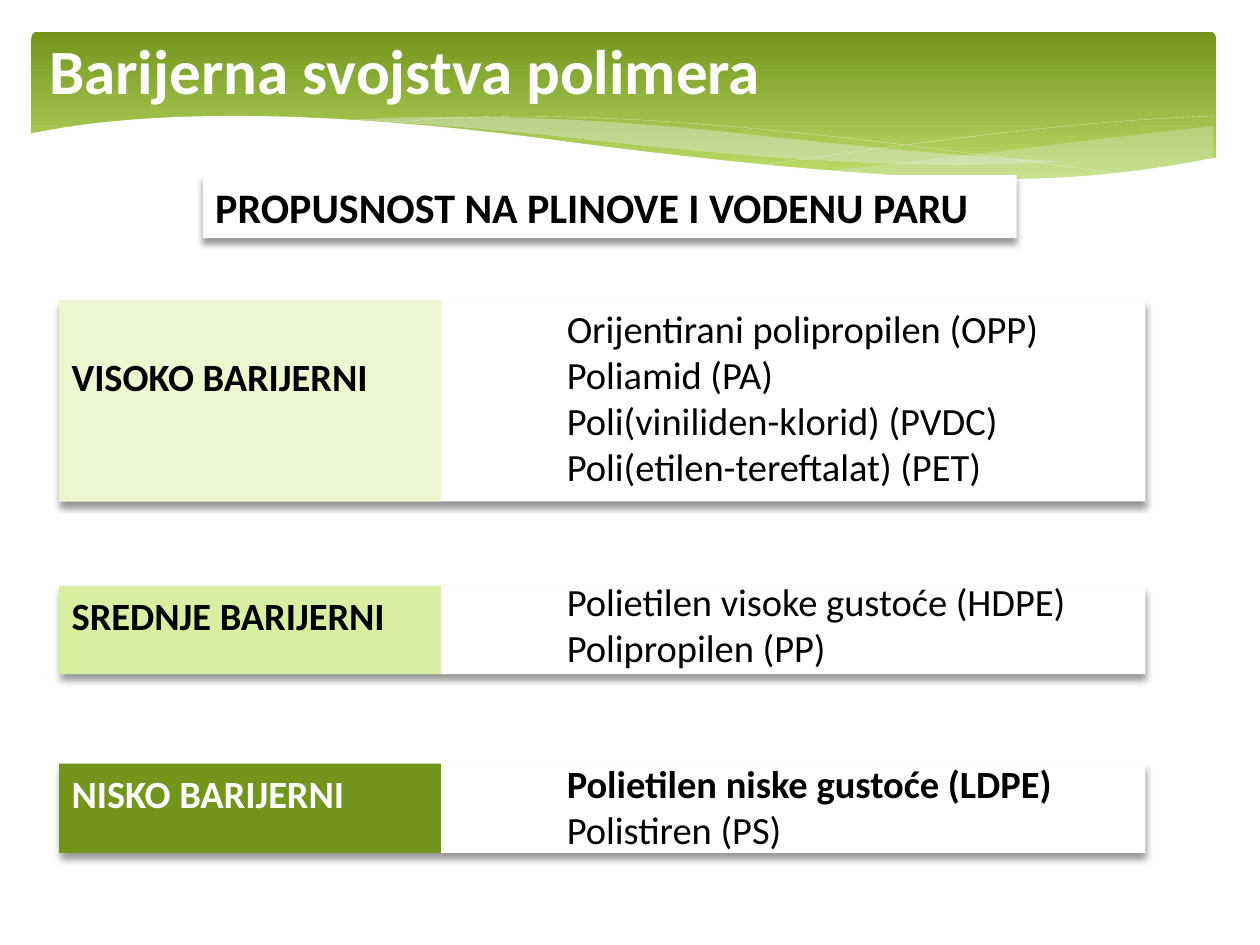
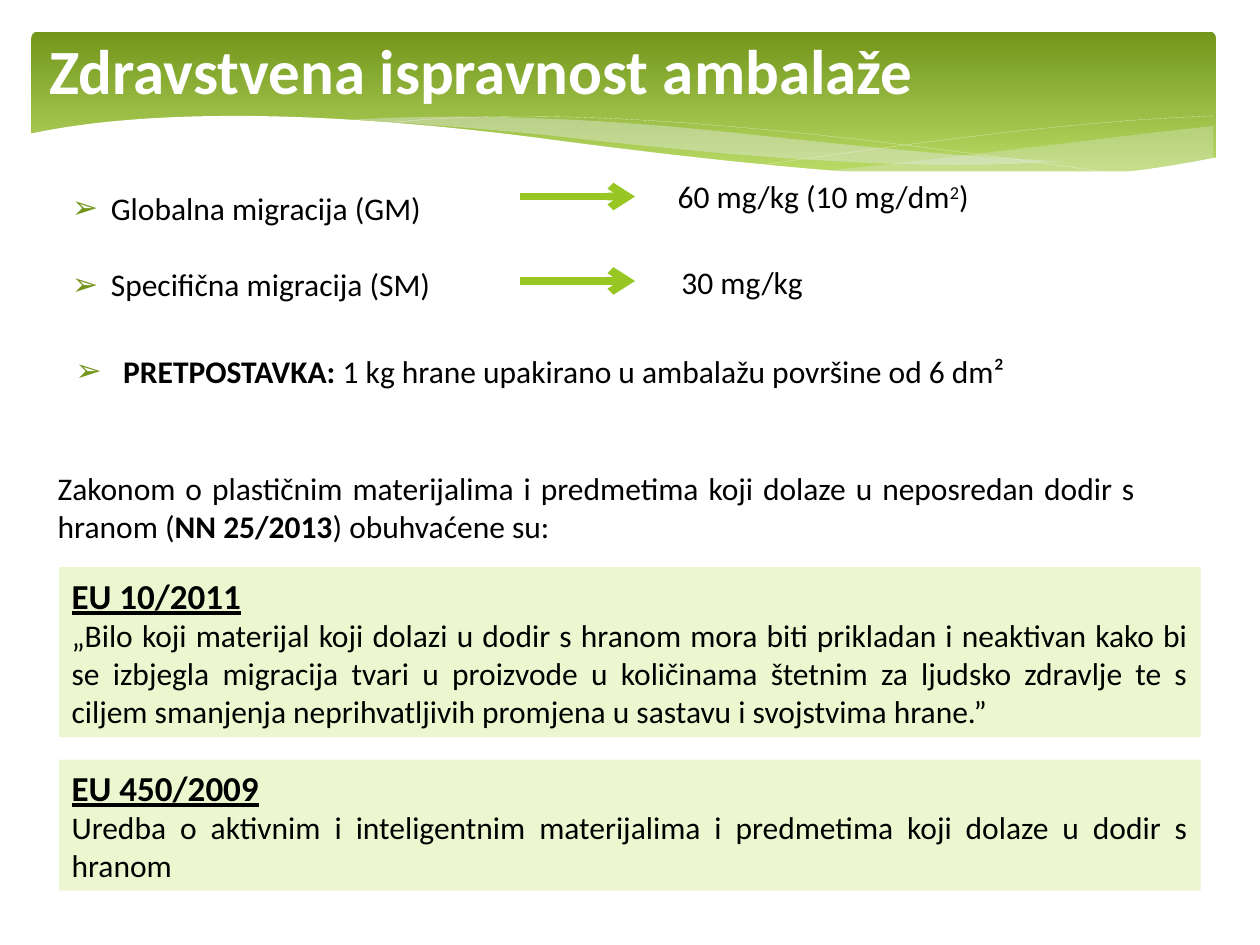
"""Build two slides on the barrier properties and food safety of polymer packaging."""
from math import comb

from lxml import etree
from pptx import Presentation
from pptx.dml.color import RGBColor
from pptx.enum.shapes import MSO_CONNECTOR, MSO_SHAPE
from pptx.enum.text import MSO_ANCHOR, MSO_AUTO_SIZE, PP_ALIGN
from pptx.oxml.ns import qn
from pptx.util import Inches, Pt

RECTANGLE, ROUNDED = MSO_SHAPE.RECTANGLE, MSO_SHAPE.ROUNDED_RECTANGLE
STRAIGHT = MSO_CONNECTOR.STRAIGHT
TOP, MIDDLE = MSO_ANCHOR.TOP, MSO_ANCHOR.MIDDLE
LEFT, JUSTIFY = PP_ALIGN.LEFT, PP_ALIGN.JUSTIFY
NO_AUTOFIT = MSO_AUTO_SIZE.NONE

WHITE = RGBColor(0xFF, 0xFF, 0xFF)
BLACK = RGBColor(0x00, 0x00, 0x00)
DARK_GREEN = RGBColor(0x72, 0x95, 0x1A)
LIGHT_GREEN = RGBColor(0xC5, 0xE6, 0x72)
ARROW_GREEN = RGBColor(0x98, 0xC7, 0x23)
MID_TINT = RGBColor(0xD8, 0xEE, 0xA1)
PALE_TINT = RGBColor(0xEC, 0xF7, 0xD0)
MIST = RGBColor(0xE7, 0xEC, 0xED)

FONT, BULLET_FONT = "Calibri", "Arial"
TITLE_SIZE, SUBJECT_SIZE, LEVEL_SIZE, NUMBER_SIZE, BODY_SIZE = 36, 24, 22, 20, 18
PANEL_LEFT, PANEL_WIDTH = 0.47, 9.06
CARD_WIDTH, LABEL_WIDTH, POLYMER_LEFT = 8.62, 3.03, 4.4
CURVE_STEPS = 24
MASTER_FIRST_ID = 100

RIGHT_VEIL = [
    [(9.63, 1), (8.7, 1.1), (7.6, 1.25), (6.52, 1.36)],
    [(6.52, 1.36), (7.6, 1.45), (8.6, 1.47), (9.63, 1.26)],
]
MIDDLE_VEIL = [
    [(8.43, 1.28), (7.7, 1.25), (6.8, 1.16), (5.98, 1.07)],
    [(5.98, 1.07), (4.9, 0.95), (3.8, 0.89), (2.8, 0.95)],
    [(2.8, 0.95), (3.3, 0.98), (3.8, 1.02), (4.32, 1.07)],
    [(4.32, 1.07), (5.7, 1.23), (7.2, 1.37), (8.43, 1.28)],
]
FALLING_THREAD = [[(3.03, 0.98), (4.6, 0.8), (6.8, 1.08), (8.95, 1.39)]]
RISING_THREAD = [[(6.04, 1.31), (7.3, 1.13), (8.5, 0.96), (9.63, 0.92)]]
LOWER_WAVE = [
    [(9.65, 1.25), (9.2, 1.34), (8.65, 1.42), (7.98, 1.42)],
    [(7.98, 1.42), (7, 1.42), (5.6, 1.27), (4.39, 1.11)],
    [(4.39, 1.11), (3.5, 0.99), (2.6, 0.92), (1.88, 0.92)],
    [(1.88, 0.92), (1.2, 0.92), (0.65, 0.97), (0.2, 1.07)],
    [(0.2, 1.07), (0.2, 1.7)],
    [(0.2, 1.7), (9.65, 1.7)],
]
FILLED_WAVES = [(RIGHT_VEIL, MIST, 29), (MIDDLE_VEIL, MIST, 40)]
THREADS = [(FALLING_THREAD, None, 0), (RISING_THREAD, None, 0)]
WAVES = FILLED_WAVES + THREADS + [(LOWER_WAVE, WHITE, 100)]


def add_box(slide, left, top, width, height, color, shadowed=False):
    """Add a plain filled rectangle, with a soft shadow below it on request."""
    box = slide.shapes.add_shape(
        RECTANGLE, Inches(left), Inches(top), Inches(width), Inches(height))
    box.fill.solid()
    box.fill.fore_color.rgb = color
    box.line.fill.background()
    box.shadow.inherit = False
    if shadowed:
        effects = box.element.spPr.find(qn("a:effectLst"))
        shadow = etree.SubElement(effects, qn("a:outerShdw"), blurRad=str(Pt(4)),
                                  dist=str(Pt(3)), dir="5400000", rotWithShape="0")
        shade = etree.SubElement(shadow, qn("a:srgbClr"), val=str(BLACK))
        etree.SubElement(shade, qn("a:alpha"), val="40000")
    return box


def write(shape, lines, size, color=BLACK, bold=False, align=LEFT, anchor=TOP):
    """Write one paragraph per line; a line is a text or a list of (text, bold) runs."""
    frame = shape.text_frame
    frame.word_wrap = True
    frame.auto_size = NO_AUTOFIT
    frame.vertical_anchor = anchor
    for index, line in enumerate(lines):
        paragraph = frame.add_paragraph() if index else frame.paragraphs[0]
        paragraph.alignment = align
        paragraph.space_before = Pt(0)
        paragraph.font.name = FONT
        paragraph.font.size = Pt(size)
        paragraph.font.bold = bold
        paragraph.font.color.rgb = color
        if isinstance(line, str):
            paragraph.add_run().text = line
            continue
        for text, run_bold in line:
            run = paragraph.add_run()
            run.text = text
            run.font.bold = run_bold
    return frame.paragraphs


prs = Presentation()
prs.slide_width, prs.slide_height = Inches(10), Inches(7.5)
barrier = prs.slides.add_slide(prs.slide_layouts[5])
safety = prs.slides.add_slide(prs.slide_layouts[1])

band = barrier.shapes.add_shape(
    ROUNDED, Inches(0.25), Inches(0.25), Inches(9.4), Inches(1.45))
band.adjustments[0] = 0.034
band.fill.gradient()
band.fill.gradient_angle = 270
for stop, color, position in zip(band.fill.gradient_stops, (DARK_GREEN, LIGHT_GREEN), (0, 0.9)):
    stop.color.rgb = color
    stop.position = position
band.line.fill.background()

header = [band]
for edges, color, opacity in WAVES:
    outline = []
    for controls in edges:
        degree = len(controls) - 1
        for step in range(CURVE_STEPS + 1):
            t = step / CURVE_STEPS
            weights = [comb(degree, k) * t**k * (1 - t)**(degree - k) for k in range(degree + 1)]
            outline.append(tuple(
                Inches(sum(weight * value for weight, value in zip(weights, axis)))
                for axis in zip(*controls)))
    builder = barrier.shapes.build_freeform(*outline[0])
    builder.add_line_segments(outline[1:], close=color is not None)
    wave = builder.convert_to_shape()
    if color is None:
        wave.fill.background()
        wave.line.color.rgb = WHITE
        wave.line.width = Pt(0.05)
    else:
        wave.fill.solid()
        wave.fill.fore_color.rgb = color
        wave.line.fill.background()
        tone = wave.element.spPr.find(qn("a:solidFill"))[0]
        etree.SubElement(tone, qn("a:alpha"), val=str(opacity * 1000))
    header.append(wave)

for index, part in enumerate(header):
    part.shadow.inherit = False
    part.element.nvSpPr.cNvPr.set("id", str(MASTER_FIRST_ID + index))
    prs.slide_master.shapes.element.insert(2 + index, part.element)

for slide, heading in ((barrier, "Barijerna svojstva polimera"),
                       (safety, "Zdravstvena ispravnost ambalaže")):
    title = slide.shapes.title
    title.left, title.top = Inches(0.29), Inches(0.21)
    title.width, title.height = Inches(9.36), Inches(0.68)
    write(title, [heading], TITLE_SIZE, WHITE, bold=True, anchor=MIDDLE)

subject = add_box(barrier, 1.61, 1.39, 6.46, 0.5, WHITE, shadowed=True)
write(subject, ["PROPUSNOST NA PLINOVE I VODENU PARU"], SUBJECT_SIZE, bold=True)

BARRIER_LEVELS = [
    ("VISOKO BARIJERNI", PALE_TINT, BLACK, 2.38, 1.6, 0.42, 2.37,
     ["Orijentirani polipropilen (OPP)", "Poliamid (PA)",
      "Poli(viniliden-klorid) (PVDC)", "Poli(etilen-tereftalat) (PET)"]),
    ("SREDNJE BARIJERNI", MID_TINT, BLACK, 4.65, 0.7, 0.05, 4.54,
     ["Polietilen visoke gustoće (HDPE)", "Polipropilen (PP)"]),
    ("NISKO BARIJERNI", DARK_GREEN, WHITE, 6.06, 0.71, 0.05, 5.98,
     [[("Polietilen niske gustoće (LDPE)", True)], "Polistiren (PS)"]),
]
for level, tint, ink, card_top, card_height, inset, polymer_top, polymers in BARRIER_LEVELS:
    add_box(barrier, PANEL_LEFT, card_top, CARD_WIDTH, card_height, WHITE, shadowed=True)
    label = add_box(barrier, PANEL_LEFT, card_top, LABEL_WIDTH, card_height, tint)
    label.text_frame.margin_top = Inches(inset)
    write(label, [level], LEVEL_SIZE, ink, bold=True)
    polymer_list = barrier.shapes.add_textbox(
        Inches(POLYMER_LEFT), Inches(polymer_top), Inches(5), Inches(0.1 + 0.37 * len(polymers)))
    write(polymer_list, polymers, LEVEL_SIZE)

panel = add_box(safety, PANEL_LEFT, 1.36, PANEL_WIDTH, 1.92, WHITE)
safety.shapes.element.insert(2, panel.element)

migration = safety.placeholders[1]
migration.left, migration.top = Inches(PANEL_LEFT), Inches(1.45)
migration.width, migration.height = Inches(3.43), Inches(1.01)
global_kind, specific_kind = write(
    migration, ["Globalna migracija (GM)", "Specifična migracija (SM)"], BODY_SIZE)
specific_kind.space_before = Pt(22)

assumption = safety.shapes.add_textbox(Inches(0.5), Inches(2.7), Inches(7.8), Inches(0.54))
premise = write(assumption, [[("PRETPOSTAVKA: ", True),
                              ("1 kg hrane upakirano u ambalažu površine od 6 dm²", False)]],
                BODY_SIZE, anchor=MIDDLE)[0]
premise.line_spacing = 0.8

for paragraph, indent in ((global_kind, 0.31), (specific_kind, 0.31), (premise, 0.38)):
    properties = paragraph._p.get_or_add_pPr()
    properties.set("marL", str(Inches(indent)))
    properties.set("indent", str(-Inches(indent)))
    bullet_color = etree.SubElement(properties, qn("a:buClr"))
    etree.SubElement(bullet_color, qn("a:srgbClr"), val=str(DARK_GREEN))
    etree.SubElement(properties, qn("a:buFont"), typeface=BULLET_FONT)
    etree.SubElement(properties, qn("a:buChar"), char="➢")

global_limit = [("60 mg/kg (10 mg/dm", False), ("2", False), (")", False)]
limit_lines = []
for left, top, arrow_y, limit in ((5.28, 1.36, 1.56, global_limit),
                                  (5.31, 2.04, 2.23, "30 mg/kg")):
    limit_box = safety.shapes.add_textbox(Inches(left), Inches(top), Inches(2.55), Inches(0.4))
    limit_lines.append(write(limit_box, [limit], BODY_SIZE)[0])
    arrow = safety.shapes.add_connector(
        STRAIGHT, Inches(4.13), Inches(arrow_y), Inches(5.04), Inches(arrow_y))
    arrow.line.color.rgb = ARROW_GREEN
    arrow.line.width = Pt(4.5)
    etree.SubElement(arrow.element.spPr.find(qn("a:ln")), qn("a:tailEnd"), type="arrow")
    etree.SubElement(arrow.element.spPr, qn("a:effectLst"))
square_sign = limit_lines[0].runs[1]
square_sign._r.get_or_add_rPr().set("baseline", "30000")

law = safety.shapes.add_textbox(Inches(0.36), Inches(3.67), Inches(8.75), Inches(0.71))
write(law, [[("Zakonom o plastičnim materijalima i predmetima koji dolaze u neposredan dodir s "
              "hranom (", False), ("NN 25/2013", True), (") obuhvaćene su:", False)]],
      BODY_SIZE, align=JUSTIFY, anchor=MIDDLE)

REGULATIONS = [
    (4.5, 1.35, "EU 10/2011",
     "„Bilo koji materijal koji dolazi u dodir s hranom mora biti prikladan i neaktivan kako bi "
     "se izbjegla migracija tvari u proizvode u količinama štetnim za ljudsko zdravlje te s "
     "ciljem smanjenja neprihvatljivih promjena u sastavu i svojstvima hrane.”"),
    (6.03, 1.04, "EU 450/2009",
     "Uredba o aktivnim i inteligentnim materijalima i predmetima koji dolaze u dodir s hranom"),
]
for top, height, number, summary in REGULATIONS:
    regulation = add_box(safety, PANEL_LEFT, top, PANEL_WIDTH, height, PALE_TINT)
    number_line = write(regulation, [number, summary], BODY_SIZE,
                        align=JUSTIFY, anchor=MIDDLE)[0]
    number_line.font.size = Pt(NUMBER_SIZE)
    number_line.font.bold = True
    number_line.font.underline = True

prs.save("out.pptx")
